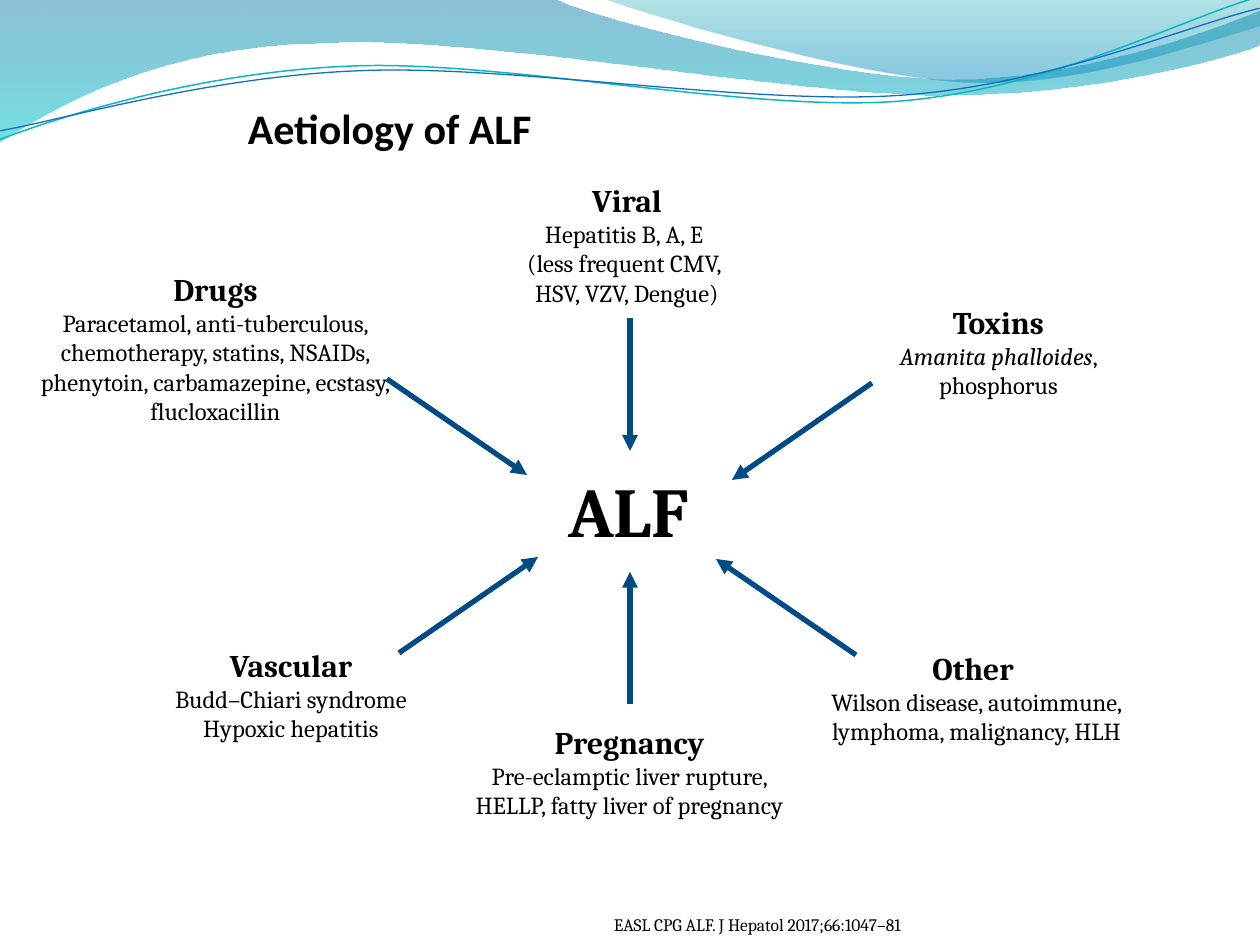
from copy import deepcopy

from pptx import Presentation
from pptx import util as u
from pptx.dml import color
from pptx.enum import shapes, text
from pptx.oxml import ns
from lxml import etree

SCALE = 914400 / 126
COLORS = {
    "ink": "000000", "arrow": "004B86",
    "deep": "0074A1", "aqua": "00C6CF", "teal": "00A1A9", "sky": "008BBF",
    "teal_line": "0AB8BF", "blue_line": "0F6FC6",
}
HEADING = {"name": "Cambria", "size": u.Pt(18), "bold": True, "italic": False}
DETAIL = {"name": "Cambria", "size": u.Pt(14), "bold": False, "italic": False}
SPECIES = {**DETAIL, "italic": True}
CENTRE = {"name": "Cambria", "size": u.Pt(40), "bold": True}
TITLE = {"name": "Calibri", "size": u.Pt(24), "bold": True}
CITATION = {"name": "Cambria", "size": u.Pt(10), "bold": False}


def px(value):
    return u.Emu(round(value * SCALE))


def rgb(name):
    return color.RGBColor.from_string(COLORS[name])


def apply(target, values):
    for name, value in values.items():
        setattr(target, name, value)


class Deck:
    def __init__(self):
        self.presentation = Presentation()
        apply(self.presentation, {"slide_width": px(1260), "slide_height": px(945)})
        self.slide = self.presentation.slides.add_slide(self.presentation.slide_layouts[1])

    def runs(self, paragraph, parts, align):
        paragraph.alignment = align
        for words, style in parts:
            for number, line in enumerate(words.split("\n")):
                if number:
                    paragraph.add_line_break()
                    paragraph._p[-1].append(deepcopy(run._r.rPr))
                run = paragraph.add_run()
                run.text = line
                apply(run.font, style)
                run.font.color.rgb = rgb("ink")

    def placeholder(self, index, box, margins, words, style):
        shape = self.slide.placeholders[index]
        apply(shape, dict(zip(("left", "top", "width", "height"), map(px, box))))
        frame = shape.text_frame
        names = ("margin_left", "margin_top", "margin_right", "margin_bottom")
        apply(frame, dict(zip(names, map(px, margins))))
        apply(frame, {"vertical_anchor": text.MSO_ANCHOR.BOTTOM, "word_wrap": True,
                      "auto_size": text.MSO_AUTO_SIZE.NONE})
        paragraph = frame.paragraphs[0]
        paragraph.space_before = u.Pt(0)
        properties = paragraph._p.get_or_add_pPr()
        properties.set("marL", "0")
        properties.set("indent", "0")
        etree.SubElement(properties, ns.qn("a:buNone"))
        self.runs(paragraph, [(words, style)], text.PP_ALIGN.LEFT)

    def label(self, box, paragraphs):
        frame = self.slide.shapes.add_textbox(*map(px, box)).text_frame
        apply(frame, {"word_wrap": True, "auto_size": text.MSO_AUTO_SIZE.SHAPE_TO_FIT_TEXT})
        for number, parts in enumerate(paragraphs):
            paragraph = frame.add_paragraph() if number else frame.paragraphs[0]
            self.runs(paragraph, parts, text.PP_ALIGN.CENTER)

    def cause(self, box, heading, *details):
        paragraphs = [[(heading, HEADING)]]
        for detail in details:
            paragraphs.append([(detail, DETAIL)] if isinstance(detail, str) else detail)
        self.label(box, paragraphs)

    def arrow(self, start, end):
        connector = self.slide.shapes.add_connector(
            shapes.MSO_CONNECTOR.STRAIGHT, *map(px, (*start, *end)))
        connector.line.color.rgb = rgb("arrow")
        connector.line.width = u.Pt(3)
        outline = connector.line._get_or_add_ln()
        etree.SubElement(outline, ns.qn("a:tailEnd"), type="triangle")
        etree.SubElement(connector._element.spPr, ns.qn("a:effectLst"))

    def outline(self, start, segments, close):
        builder = self.slide.shapes.build_freeform(*start, scale=SCALE)
        builder.add_line_segments([point for segment in segments for point in segment],
                                  close=close)
        shape = builder.convert_to_shape()
        shape.shadow.inherit = False
        lines = iter(list(shape._element.iter(ns.qn("a:lnTo"))))
        for segment in segments:
            first, *others = [next(lines) for _ in segment]
            if others:
                curve = etree.Element(ns.qn("a:cubicBezTo"))
                first.addprevious(curve)
                for line in (first, *others):
                    curve.append(line[0])
                    line.getparent().remove(line)
        return shape

    def wave(self, start, segments, stops):
        shape = self.outline(start, segments, True)
        shape.line.fill.background()
        shape.fill.gradient()
        shape.fill.gradient_angle = 270
        for stop, (position, name, opacity) in zip(shape.fill.gradient_stops, stops):
            stop.position = position
            stop.color.rgb = rgb(name)
            value = stop._gs.find(ns.qn("a:srgbClr"))
            etree.SubElement(value, ns.qn("a:alpha"), val=str(opacity * 1000))

    def ribbon(self, start, segments, name, width):
        shape = self.outline(start, segments, False)
        shape.rotation = 357.3
        shape.fill.background()
        shape.line.color.rgb = rgb(name)
        shape.line.width = u.Pt(width)


def main():
    deck = Deck()
    deck.wave((-1, -1), [
        ((554, -1),),
        ((600, 21), (837, 79), (955, 79)),
        ((1074, 79), (1207, 33), (1260, 11)),
        ((1261, 45),),
        ((1239, 55), (1096, 96), (940, 95)),
        ((784, 95), (481, 35), (324, 43)),
        ((163, 45), (58, 105), (-1, 142)),
    ], [(0, "deep", 45), (1, "aqua", 55)])
    deck.wave((604, -1), [
        ((641, 14), (859, 78), (969, 82)),
        ((1079, 87), (1211, 40), (1260, 26)),
        ((1260, 0),),
    ], [(0, "teal", 30), (0.8, "sky", 45)])
    deck.ribbon((-3, 110), [
        ((58, 90), (199, 52), (350, 53)),
        ((499, 53), (745, 118), (896, 114)),
        ((1049, 109), (1184, 45), (1260, 27)),
    ], "teal_line", 0.85)
    deck.ribbon((-2, 101), [
        ((57, 94), (207, 57), (357, 58)),
        ((509, 58), (750, 112), (902, 108)),
        ((1052, 104), (1188, 52), (1262, 38)),
    ], "blue_line", 0.75)

    deck.placeholder(0, (63, 21, 1134, 136), (185, 6, 0, 4), "Aetiology of ALF", TITLE)
    deck.placeholder(1, (1, 893, 1036, 52), (613, 10, 20, 10),
                     "EASL CPG ALF. J Hepatol 2017;66:1047–81", CITATION)

    deck.cause((475, 175, 304, 140), "Viral",
               "Hepatitis B, A, E \n(less frequent CMV, \nHSV, VZV, Dengue)")
    deck.cause((25, 264, 381, 170), "Drugs",
               "Paracetamol, anti-tuberculous, chemotherapy, statins, NSAIDs, "
               "phenytoin, carbamazepine, ecstasy, flucloxacillin")
    deck.cause((141, 640, 300, 111), "Vascular", "Budd–Chiari syndrome", "Hypoxic hepatitis")
    deck.cause((450, 717, 359, 111), "Pregnancy",
               "Pre-eclamptic liver rupture, HELLP, fatty liver of pregnancy")
    deck.cause((810, 643, 333, 140), "Other ",
               "Wilson disease, autoimmune, lymphoma, malignancy, HLH")
    deck.cause((872, 297, 253, 149), "Toxins",
               [("Amanita phalloides", SPECIES), (", phosphorus", DETAIL)])
    deck.label((509, 461, 239, 97), [[("ALF", CENTRE)]])

    for start, end in (
        ((630, 318), (630, 451)), ((856, 655), (716, 559)), ((399, 653), (538, 557)),
        ((872, 383), (732, 480)), ((387, 379), (527, 475)), ((630, 704), (630, 572)),
    ):
        deck.arrow(start, end)
    deck.presentation.save("out.pptx")


if __name__ == "__main__":
    main()
